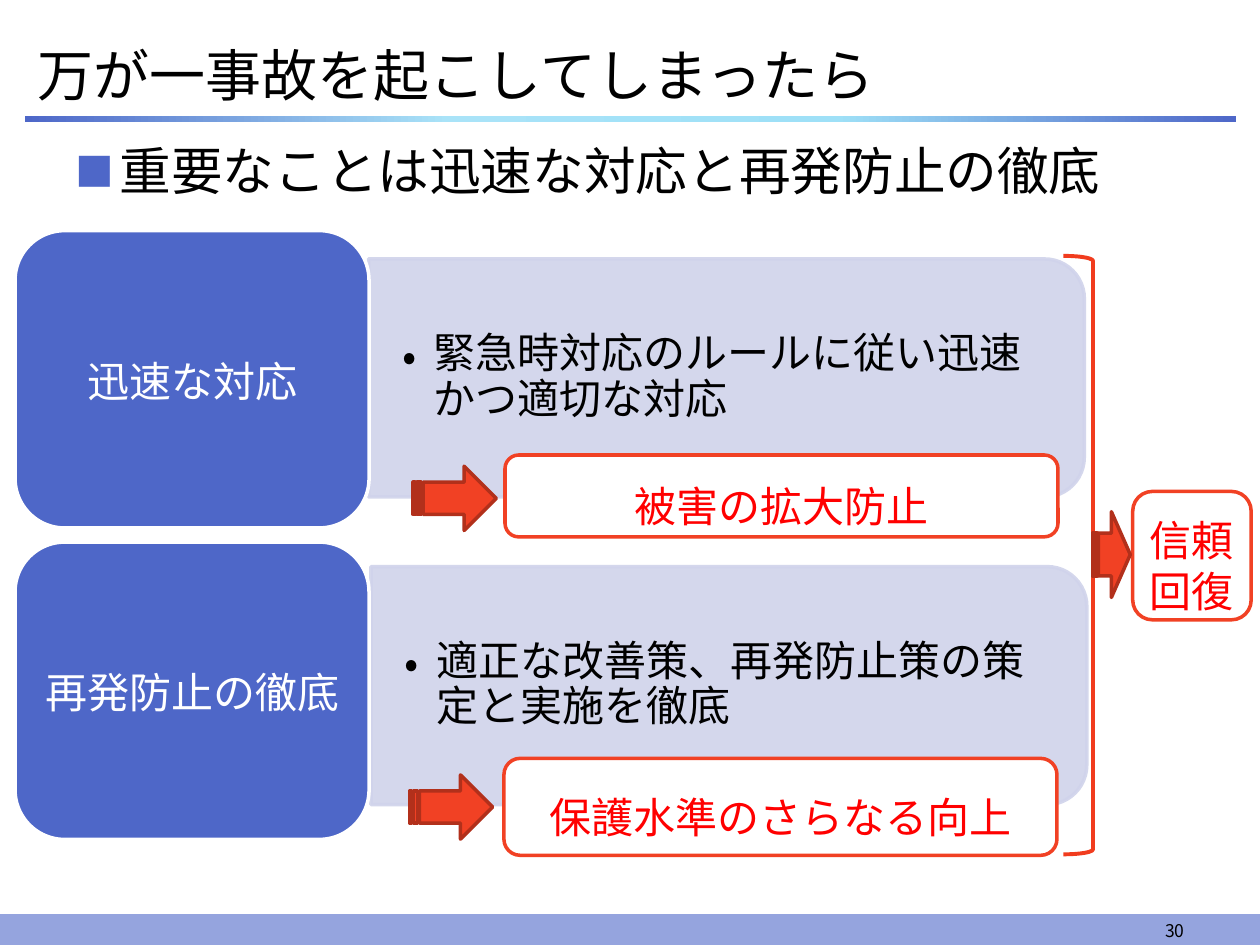
from lxml.etree import SubElement
from pptx import Presentation
from pptx.dml.color import RGBColor
from pptx.enum.shapes import MSO_SHAPE as Geo
from pptx.enum.text import MSO_ANCHOR as Anchor, PP_ALIGN as Align
from pptx.oxml import parse_xml
from pptx.oxml.ns import nsdecls, qn
from pptx.util import Pt

FONT = "Noto Sans CJK JP"
HEX = {
    "blue": "4E67C8", "foot": "95A4DE", "pale": "D0D3EB", "red": "F14124",
    "dark": "B2301B", "brace": "F13C1E", "text": "FF0000",
    "black": "000000", "white": "FFFFFF",
}
STOPS = [(0, "4E67C8"), (35, "A9E3F8"), (67, "9EE0F7"), (100, "4E67C8")]
LABEL = {"color": "text", "align": Align.CENTER, "inset": (5, 17, 5, 6)}


def color(name):
    """Return the named colour."""
    return RGBColor.from_string(HEX[name])


def write(shape, lines, size=24, color_name=None, align=Align.LEFT,
          anchor=Anchor.MIDDLE, inset=(7.2, 3.6, 7.2, 3.6), space=None, **more):
    """Fill a shape with formatted paragraphs."""
    frame = shape.text_frame
    left, top, right, bottom = map(Pt, inset)
    look = {"word_wrap": True, "vertical_anchor": anchor, "margin_left": left,
            "margin_top": top, "margin_right": right, "margin_bottom": bottom}
    for key, value in look.items():
        setattr(frame, key, value)
    frame.text = "\n".join(lines)
    for para in frame.paragraphs:
        para.alignment = align
        para.line_spacing = space
        for run in para.runs:
            face = {"name": FONT, "size": Pt(size), "bold": False}
            for key, value in face.items():
                setattr(run.font, key, value)
            run.font.color.rgb = color(more.get("color", "black"))
            SubElement(run.font._element, qn("a:ea"), typeface=FONT)
    return frame


def bullet(para, char, indent, tint="black", scale=100):
    """Give a paragraph a hanging bullet."""
    props = para._p.get_or_add_pPr()
    props.set("marL", str(Pt(indent)))
    props.set("indent", str(-Pt(indent)))
    ink = SubElement(props, qn("a:buClr"))
    SubElement(ink, qn("a:srgbClr"), val=HEX[tint])
    SubElement(props, qn("a:buSzPct"), val=str(scale * 1000))
    SubElement(props, qn("a:buFont"), typeface=FONT)
    SubElement(props, qn("a:buChar"), char=char)


def draw(slide, geo, box, fill, line, width=2):
    """Add a flat preset shape."""
    shape = slide.shapes.add_shape(geo, *map(Pt, box))
    shape.shadow.inherit = False
    if fill:
        shape.fill.solid()
        shape.fill.fore_color.rgb = color(fill)
    else:
        shape.fill.background()
    if line:
        shape.line.color.rgb = color(line)
        shape.line.width = Pt(width)
    else:
        shape.line.fill.background()
    return shape


def label(slide, box, lines):
    """Add a red-framed label."""
    shape = draw(slide, Geo.FLOWCHART_ALTERNATE_PROCESS, box, "white", "red")
    write(shape, lines, **LABEL)


def arrow(slide, box):
    """Add a striped red arrow."""
    draw(slide, Geo.STRIPED_RIGHT_ARROW, box, "red", "dark")


def header(slide, x, y, w):
    """Place the title, its rule and the lead line."""
    title = slide.shapes.title
    spots = {"left": x, "top": y, "width": w, "height": 46.8}
    for key, value in spots.items():
        setattr(title, key, Pt(value))
    write(title, ["万が一事故を起こしてしまったら"], size=32)
    rule = draw(slide, Geo.RECTANGLE, (x, y + 47.5, w, 3.6), "blue", None)
    stops = "".join(f'<a:gs pos="{pos * 1000}"><a:srgbClr val="{tint}"/></a:gs>'
                    for pos, tint in STOPS)
    grad = parse_xml(f'<a:gradFill {nsdecls("a")}><a:gsLst>{stops}</a:gsLst>'
                     '<a:lin ang="0" scaled="0"/></a:gradFill>')
    solid = rule._element.spPr.find(qn("a:solidFill"))
    solid.getparent().replace(solid, grad)
    lead = slide.shapes.add_textbox(Pt(x + 21.6), Pt(y + 57), Pt(648), Pt(50))
    frame = write(lead, ["重要なことは迅速な対応と再発防止の徹底"], size=29.5,
                  anchor=Anchor.TOP)
    bullet(frame.paragraphs[0], "■", 25.2, "blue", 75)


def step(slide, x, y, name, detail, goal, panel, tag, mark):
    """Place a card, its panel, its goal label and the arrow to it."""
    dx, dy = panel
    w, h = 409, 136
    left, top = x + dx, y + dy
    box = (left + (w - h) / 2, top - (w - h) / 2, h, w)
    back = draw(slide, Geo.ROUND_2_SAME_RECTANGLE, box, "pale", "pale")
    back.rotation = 90
    for tint in back._element.spPr.iter(qn("a:srgbClr")):
        SubElement(tint, qn("a:alpha"), val="90000")
    note = slide.shapes.add_textbox(Pt(left), Pt(top + 6.8), Pt(402.5), Pt(122.4))
    frame = write(note, [detail], inset=(19.2, 9.6, 19.2, 9.6), space=0.9)
    bullet(frame.paragraphs[0], "•", 18)
    card = draw(slide, Geo.ROUNDED_RECTANGLE, (x, y, 202.3, 169.9), "blue", "white")
    write(card, [name], color="white", align=Align.CENTER,
          inset=(7, 5, 7, 0), space=0.9)
    dx, dy, high = tag
    label(slide, (x + dx, y + dy, 316, high), [goal])
    dx, dy = mark
    arrow(slide, (x + dx, y + dy, 47.5, 36.7))


def result(slide, x, y, h):
    """Place the brace and the outcome it leads to."""
    draw(slide, Geo.RIGHT_BRACE, (x, y, 33.8, h), None, "brace", 2.25)
    label(slide, (x + 39.6, y + 134.6, 67.7, 73.4), ["信頼", "回復"])
    arrow(slide, (x + 16.6, y + 146.2, 21.6, 49))


def footer(slide, y, w, h):
    """Place the bottom band and page number."""
    draw(slide, Geo.RECTANGLE, (0, y, w, h), "foot", "foot", 0.75)
    page = slide.shapes.add_textbox(Pt(516.2), Pt(y - 3.6), Pt(167.8), Pt(22.3))
    write(page, ["30"], size=10, align=Align.RIGHT, anchor=Anchor.BOTTOM)


def main():
    """Build and save the slide."""
    deck = Presentation()
    deck.slide_width, deck.slide_height = Pt(720), Pt(540)
    slide = deck.slides.add_slide(deck.slide_layouts[5])
    footer(slide, 522.7, 720, 17.3)
    header(slide, 14.4, 18.7, 692)
    step(slide, 8.6, 131.8, "迅速な対応",
         "緊急時対応のルールに従い迅速かつ適切な対応", "被害の拡大防止",
         (202, 16.2), (280, 128.2, 46.8), (227.5, 134.6))
    step(slide, 8.6, 309.8, "再発防止の徹底",
         "適正な改善策、再発防止策の策定と実施を徹底", "保護水準のさらなる向上",
         (203.4, 14), (279.4, 123.6, 55.4), (225.4, 133))
    result(slide, 607.7, 146.2, 342)
    deck.save("out.pptx")


if __name__ == "__main__":
    main()
